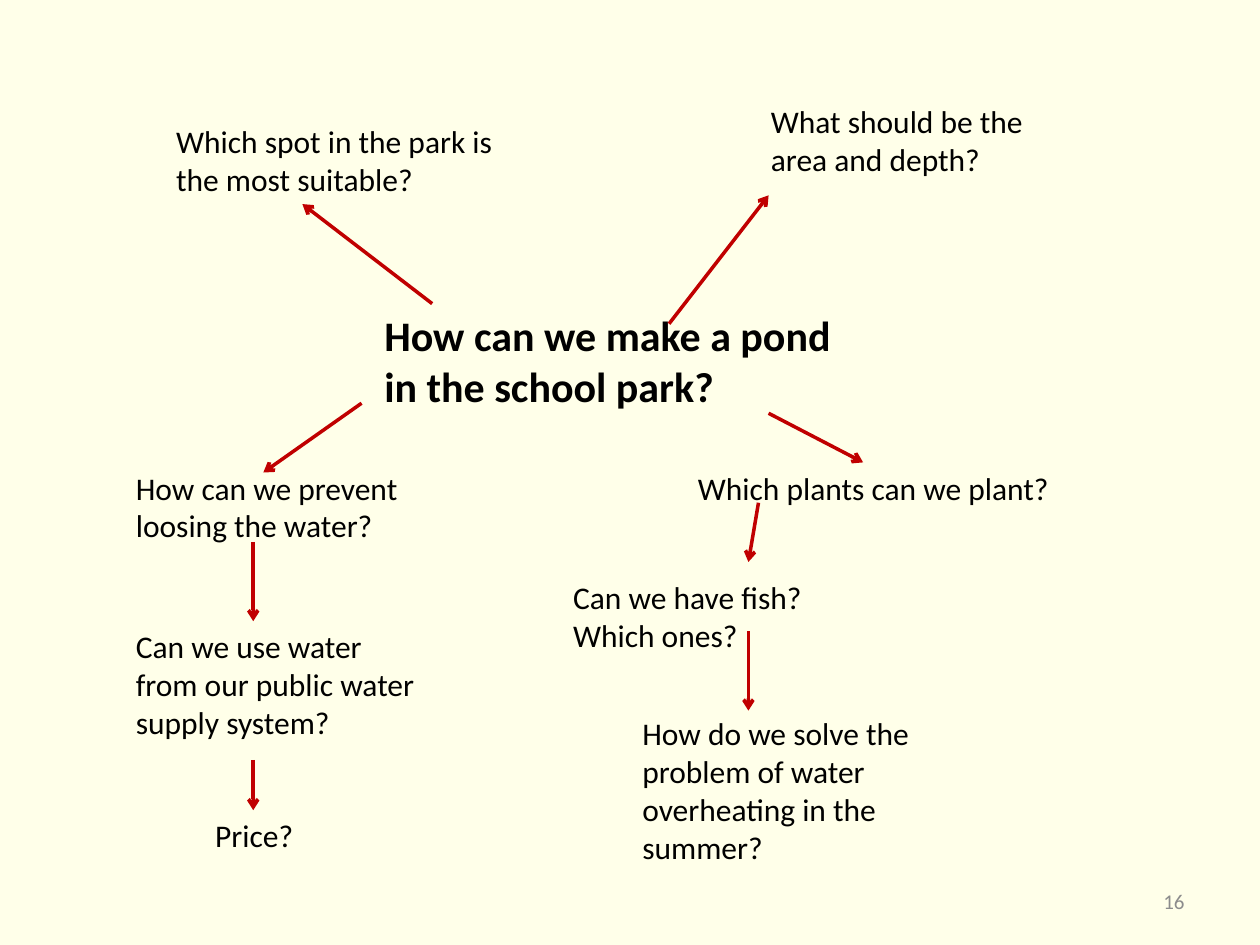
import pptx
import pptx.util
import pptx.dml.color
import pptx.enum.text
import pptx.enum.shapes
import pptx.oxml
import pptx.oxml.ns

Inches = pptx.util.Inches
RGB = pptx.dml.color.RGBColor.from_string
ALIGN = pptx.enum.text.PP_ALIGN
ANCHOR = pptx.enum.text.MSO_ANCHOR

THEME = {
    "back": "FFFFE9",
    "arrow": "C00000",
    "width": 2,
    "title": {"name": "Calibri", "size": 24, "bold": True, "color": "000000"},
    "note": {"name": "Calibri", "size": 18, "bold": False, "color": "000000"},
    "page": {"name": "Calibri", "size": 12, "bold": False, "color": "8C8C8C"},
}

TITLE = ("How can we make a pond in the school park?", (2.95, 2.41, 3.86, 0.91))
PAGE = ("16", (7.17, 6.95, 2.33, 0.4))
NOTES = [
    ("Which spot in the park is the most suitable?", (1.3, 0.92, 2.76, 0.71)),
    ("What should be the area and depth?", (6.02, 0.76, 2.6, 0.71)),
    ("How can we prevent loosing the water?", (0.98, 3.67, 2.44, 0.71)),
    ("Can we use water from our public water supply system?",
     (0.98, 4.93, 2.44, 1.01)),
    ("Price?", (1.61, 6.43, 1.5, 0.4)),
    ("Which plants can we plant?", (5.44, 3.67, 3.11, 0.4)),
    ("Can we have fish?\vWhich ones?", (4.45, 4.54, 2.99, 0.71)),
    ("How do we solve the problem of water overheating in the summer?",
     (5, 5.62, 2.44, 1.31)),
]
ARROWS = [
    ((3.43, 2.41), (2.4, 1.62)),
    ((5.31, 2.57), (6.1, 1.55)),
    ((2.87, 3.2), (2.09, 3.75)),
    ((2.01, 4.3), (2.01, 4.93)),
    ((2.01, 6.03), (2.01, 6.43)),
    ((6.1, 3.28), (6.85, 3.67)),
    ((6.02, 3.99), (5.94, 4.46)),
    ((5.94, 5.01), (5.94, 5.64)),
]


def write(shape, text, style, align=ALIGN.LEFT, anchor=ANCHOR.TOP):
    frame = shape.text_frame
    frame.text = text
    form = {"word_wrap": True, "vertical_anchor": anchor,
            "auto_size": pptx.enum.text.MSO_AUTO_SIZE.NONE}
    for key, value in form.items():
        setattr(frame, key, value)
    line = frame.paragraphs[0]
    line.alignment = align
    look = THEME[style]
    for run in line.runs:
        font = {"name": look["name"], "bold": look["bold"],
                "size": pptx.util.Pt(look["size"])}
        for key, value in font.items():
            setattr(run.font, key, value)
        run.font.color.rgb = RGB(look["color"])


def add_text(slide, text, box, style, **form):
    shape = slide.shapes.add_textbox(*map(Inches, box))
    write(shape, text, style, **form)


def add_title(slide, text, box):
    shape = slide.shapes.title
    for key, value in zip(("left", "top", "width", "height"), box):
        setattr(shape, key, Inches(value))
    write(shape, text, "title")


def add_arrow(slide, start, end):
    kind = pptx.enum.shapes.MSO_CONNECTOR.STRAIGHT
    arrow = slide.shapes.add_connector(kind, *map(Inches, start + end))
    arrow.line.color.rgb = RGB(THEME["arrow"])
    arrow.line.width = pptx.util.Pt(THEME["width"])
    names = pptx.oxml.ns.nsdecls("a")
    head = pptx.oxml.parse_xml(f'<a:tailEnd {names} type="arrow"/>')
    arrow.line._get_or_add_ln().append(head)
    plain = pptx.oxml.parse_xml(f"<a:effectLst {names}/>")
    arrow._element.spPr.append(plain)


def main():
    deck = pptx.Presentation()
    deck.slide_width, deck.slide_height = Inches(10), Inches(7.5)
    slide = deck.slides.add_slide(deck.slide_layouts[5])
    fill = slide.background.fill
    fill.solid()
    fill.fore_color.rgb = RGB(THEME["back"])
    add_title(slide, *TITLE)
    for text, box in NOTES:
        add_text(slide, text, box, "note")
    for start, end in ARROWS:
        add_arrow(slide, start, end)
    add_text(slide, *PAGE, "page", align=ALIGN.RIGHT, anchor=ANCHOR.MIDDLE)
    deck.save("out.pptx")


if __name__ == "__main__":
    main()
